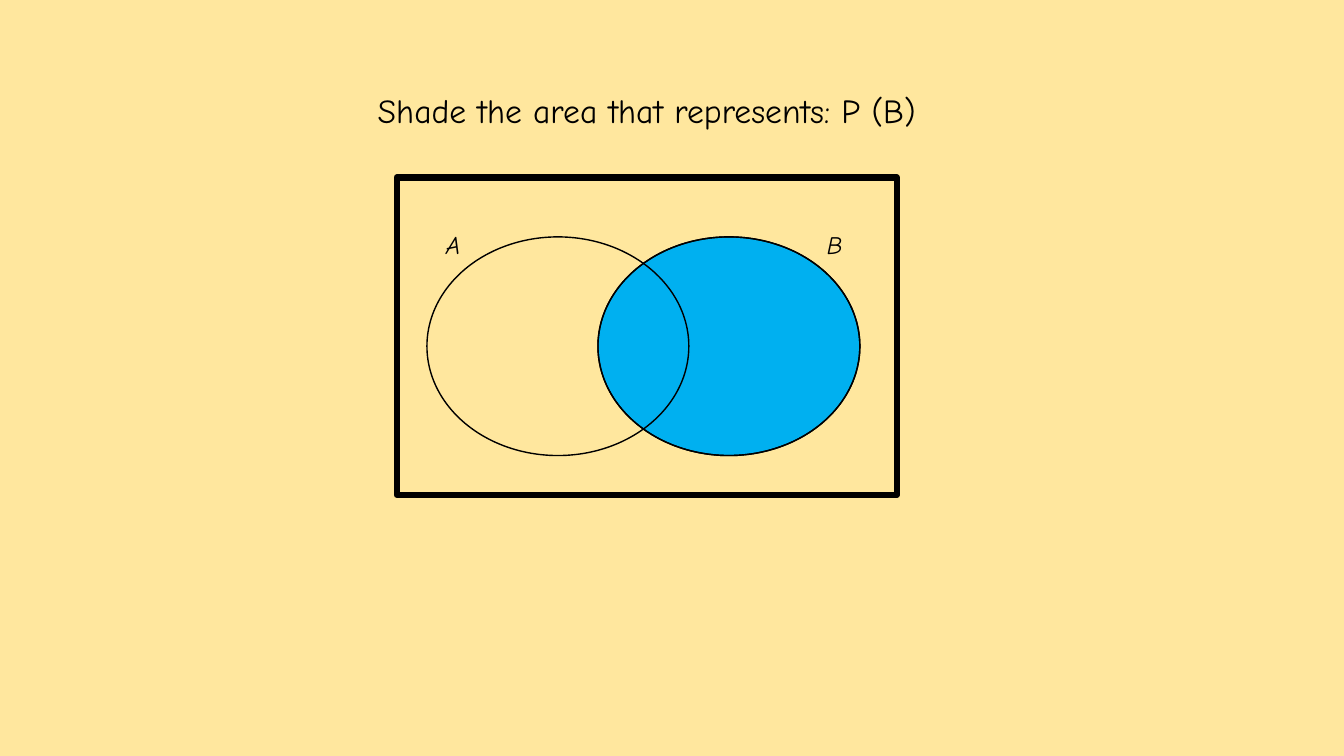
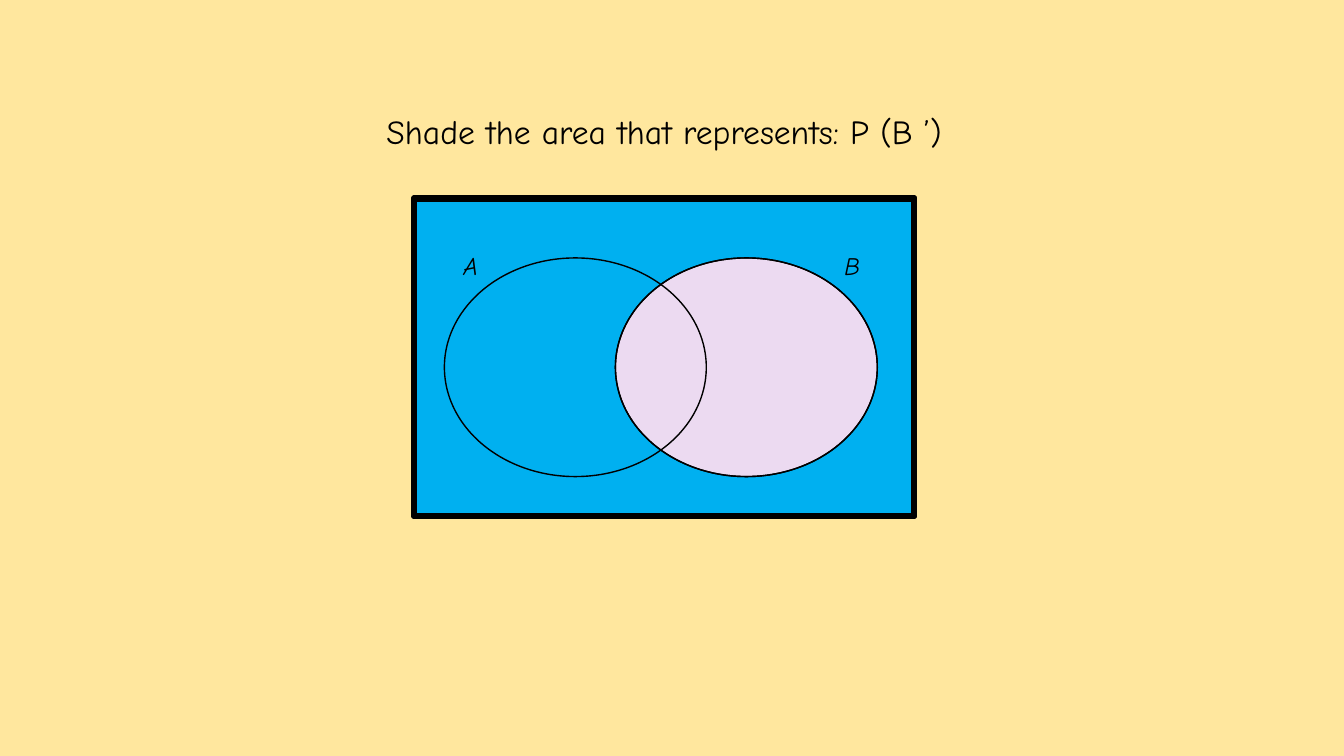
from dataclasses import dataclass
from typing import Optional

from pptx import Presentation
from pptx.dml.color import RGBColor
from pptx.enum.shapes import MSO_SHAPE
from pptx.enum.text import MSO_ANCHOR, MSO_AUTO_SIZE, PP_ALIGN
from pptx.util import Cm, Pt

RECT = MSO_SHAPE.RECTANGLE
OVAL = MSO_SHAPE.OVAL
TOP = MSO_ANCHOR.TOP
NO_AUTOFIT = MSO_AUTO_SIZE.NONE
LEFT = PP_ALIGN.LEFT
CENTER = PP_ALIGN.CENTER

SAND = RGBColor(0xFF, 0xE7, 0x9E)
BLUE = RGBColor(0x00, 0xB0, 0xF0)
LILAC = RGBColor(0xEC, 0xDA, 0xF1)
BLACK = RGBColor(0x00, 0x00, 0x00)

FONT = "Comic Neue"
TITLE_ONLY = 5


@dataclass(frozen=True)
class Box:
    x: float
    y: float
    w: float
    h: float

    def moved(self, dx: float, dy: float) -> "Box":
        return Box(self.x + dx, self.y + dy, self.w, self.h)

    def lengths(self) -> tuple:
        return Cm(self.x), Cm(self.y), Cm(self.w), Cm(self.h)


@dataclass(frozen=True)
class Outline:
    kind: MSO_SHAPE
    box: Box
    weight: float


@dataclass(frozen=True)
class Question:
    event: str
    x: float
    y: float
    frame_fill: Optional[RGBColor]
    b_fill: RGBColor


TITLE = Box(-2.9, -2.34, 18.39, 1.27)
FRAME = Outline(RECT, Box(0, 0, 12.6, 8), 4.5)
SET_A = Outline(OVAL, Box(0.76, 1.5, 6.6, 5.51), 1)
SET_B = Outline(OVAL, SET_A.box.moved(4.31, 0), 1)
LABELS = {"A": Box(0.99, 1.19, 0.76, 1.02), "B": Box(10.59, 1.19, 0.76, 1.02)}

QUESTIONS = (
    Question("P (B)", 10, 4.47, None, BLUE),
    Question("P (B ’)", 10.44, 5, BLUE, LILAC),
)


def add_outline(shapes, outline: Outline, q: Question,
                fill: Optional[RGBColor] = None) -> None:
    sp = shapes.add_shape(outline.kind, *outline.box.moved(q.x, q.y).lengths())
    sp.shadow.inherit = False
    if fill is None:
        sp.fill.background()
    else:
        sp.fill.solid()
        sp.fill.fore_color.rgb = fill
    sp.line.color.rgb = BLACK
    sp.line.width = Pt(outline.weight)


def write_text(sp, text: str, size: int, align: PP_ALIGN,
               italic: bool = False, wrap: bool = True) -> None:
    tf = sp.text_frame
    tf.auto_size = NO_AUTOFIT
    tf.word_wrap = wrap
    tf.vertical_anchor = TOP
    p = tf.paragraphs[0]
    p.alignment = align
    r = p.add_run()
    r.text = text
    r.font.name = FONT
    r.font.size = Pt(size)
    r.font.italic = italic
    r.font.color.rgb = BLACK


def add_question(prs, q: Question) -> None:
    s = prs.slides.add_slide(prs.slide_layouts[TITLE_ONLY])
    title = s.shapes.title
    title.left, title.top, title.width, title.height = TITLE.moved(q.x, q.y).lengths()
    write_text(title, f"Shade the area that represents: {q.event}", 24, CENTER)

    if q.frame_fill is not None:
        add_outline(s.shapes, FRAME, q, q.frame_fill)
    add_outline(s.shapes, SET_B, q, q.b_fill)

    venn = s.shapes.add_group_shape().shapes
    for outline in (FRAME, SET_A, SET_B):
        add_outline(venn, outline, q)
    for name, box in LABELS.items():
        label = venn.add_textbox(*box.moved(q.x, q.y).lengths())
        write_text(label, name, 18, LEFT, italic=True, wrap=False)


def main() -> None:
    prs = Presentation()
    prs.slide_width, prs.slide_height = Cm(33.87), Cm(19.05)
    background = prs.slide_master.background.fill
    background.solid()
    background.fore_color.rgb = SAND
    for q in QUESTIONS:
        add_question(prs, q)
    prs.save("out.pptx")


if __name__ == "__main__":
    main()
